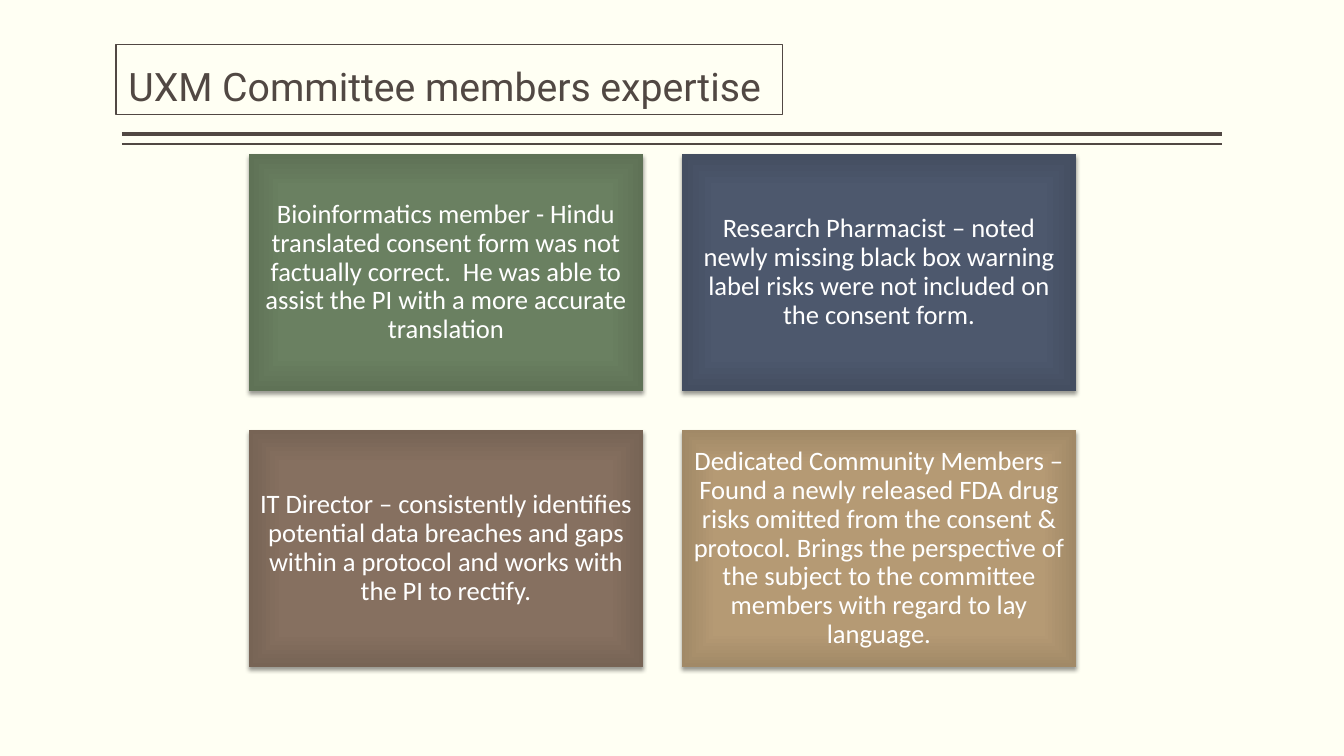
from dataclasses import dataclass

from pptx import Presentation
from pptx import util as u
from pptx.dml.color import RGBColor
from pptx.enum import shapes, text
from pptx.oxml import parse_xml
from pptx.oxml.ns import nsdecls, qn

EMU_PER_PX = 914400 / 100.8


def px(length):
    return u.Emu(round(length * EMU_PER_PX))


@dataclass(frozen=True)
class Theme:
    background: str = "FFFFF3"
    ink: str = "514843"
    card_ink: str = "FFFFFF"
    green: tuple = ("6B8162", "6A8061", "5F7256")
    blue: tuple = ("4E596E", "4D586D", "444E61")
    brown: tuple = ("877161", "867060", "776455")
    tan: tuple = ("B79B75", "B59A74", "A18967")
    title_font: str = "Roboto"
    title_size: int = 28
    card_font: str = "Calibri"
    card_size: int = 19


class SlideBuilder:
    def __init__(self, slide, theme):
        self.slide = slide
        self.theme = theme
        fill = slide.background.fill
        fill.solid()
        fill.fore_color.rgb = RGBColor.from_string(theme.background)

    def set_text(self, frame, words, font, size, color, anchor, insets):
        """Fill a text frame with one centred paragraph; insets are (side, top and bottom)."""
        frame.word_wrap = True
        frame.vertical_anchor = anchor
        frame.margin_left = frame.margin_right = px(insets[0])
        frame.margin_top = frame.margin_bottom = px(insets[1])
        paragraph = frame.paragraphs[0]
        paragraph.text = words
        paragraph.alignment = text.PP_ALIGN.CENTER
        paragraph.line_spacing = 0.9
        paragraph.font.name = font
        paragraph.font.size = u.Pt(size)
        paragraph.font.color.rgb = RGBColor.from_string(color)

    def title(self, words, left, top, width, height):
        theme = self.theme
        heading = self.slide.shapes.add_textbox(px(left), px(top), px(width), px(height))
        heading.line.color.rgb = RGBColor.from_string(theme.ink)
        heading.line.width = u.Pt(0.75)
        self.set_text(heading.text_frame, words, theme.title_font, theme.title_size,
                      theme.ink, text.MSO_ANCHOR.BOTTOM, (0, 5))

    def rule(self, left, right, y, weight):
        divider = self.slide.shapes.add_connector(
            shapes.MSO_CONNECTOR.STRAIGHT, px(left), px(y), px(right), px(y))
        divider.line.color.rgb = RGBColor.from_string(self.theme.ink)
        divider.line.width = u.Pt(weight)
        divider._element.spPr.append(parse_xml(f"<a:effectLst {nsdecls('a')}/>"))

    def card(self, words, shades, left, top, width, height):
        theme = self.theme
        panel = self.slide.shapes.add_shape(
            shapes.MSO_SHAPE.RECTANGLE, px(left), px(top), px(width), px(height))
        self.shade(panel, shades)
        panel.line.fill.background()
        self.drop_shadow(panel)
        self.set_text(panel.text_frame, words, theme.card_font, theme.card_size,
                      theme.card_ink, text.MSO_ANCHOR.MIDDLE, (8, 8))

    def shade(self, panel, shades):
        """Apply a rectangular gradient from the centre to the edges."""
        stops = "".join(
            f'<a:gs pos="{percent * 1000}"><a:srgbClr val="{color}"/></a:gs>'
            for percent, color in zip((0, 71, 100), shades))
        panel.fill.background()
        properties = panel._element.spPr
        properties.replace(properties.find(qn("a:noFill")), parse_xml(
            f'<a:gradFill {nsdecls("a")} rotWithShape="1"><a:gsLst>{stops}</a:gsLst>'
            '<a:path path="rect"><a:fillToRect l="50000" t="50000" r="50000" b="50000"/>'
            '</a:path></a:gradFill>'))

    def drop_shadow(self, panel):
        panel.shadow.inherit = False
        panel._element.spPr.find(qn("a:effectLst")).append(parse_xml(
            f'<a:outerShdw {nsdecls("a")} blurRad="{u.Pt(3.1)}" dist="{u.Pt(2)}" '
            'dir="5400000" rotWithShape="0"><a:srgbClr val="000000">'
            '<a:alpha val="38000"/></a:srgbClr></a:outerShdw>'))


def main():
    deck = Presentation()
    deck.slide_width, deck.slide_height = px(1344), px(756)
    theme = Theme()
    builder = SlideBuilder(deck.slides.add_slide(deck.slide_layouts[6]), theme)

    for y, weight in ((134, 3), (144, 1)):
        builder.rule(122, 1222, y, weight)
    builder.title("UXM Committee members expertise ", 116, 45, 667, 70)

    members = (
        ("Bioinformatics member - Hindu translated consent form was not factually "
         "correct.  He was able to assist the PI with a more accurate translation",
         theme.green),
        ("Research Pharmacist – noted newly missing black box warning label risks "
         "were not included on the consent form.", theme.blue),
        ("IT Director – consistently identifies potential data breaches and gaps "
         "within a protocol and works with the PI to rectify.", theme.brown),
        ("Dedicated Community Members – Found a newly released FDA drug risks omitted "
         "from the consent & protocol. Brings the perspective of the subject to the "
         "committee members with regard to lay language.", theme.tan),
    )
    width, height, gap = 394, 237, 39
    for index, (expertise, shades) in enumerate(members):
        row, column = divmod(index, 2)
        builder.card(expertise, shades, 249 + column * (width + gap),
                     154 + row * (height + gap), width, height)

    deck.save("out.pptx")


if __name__ == "__main__":
    main()
